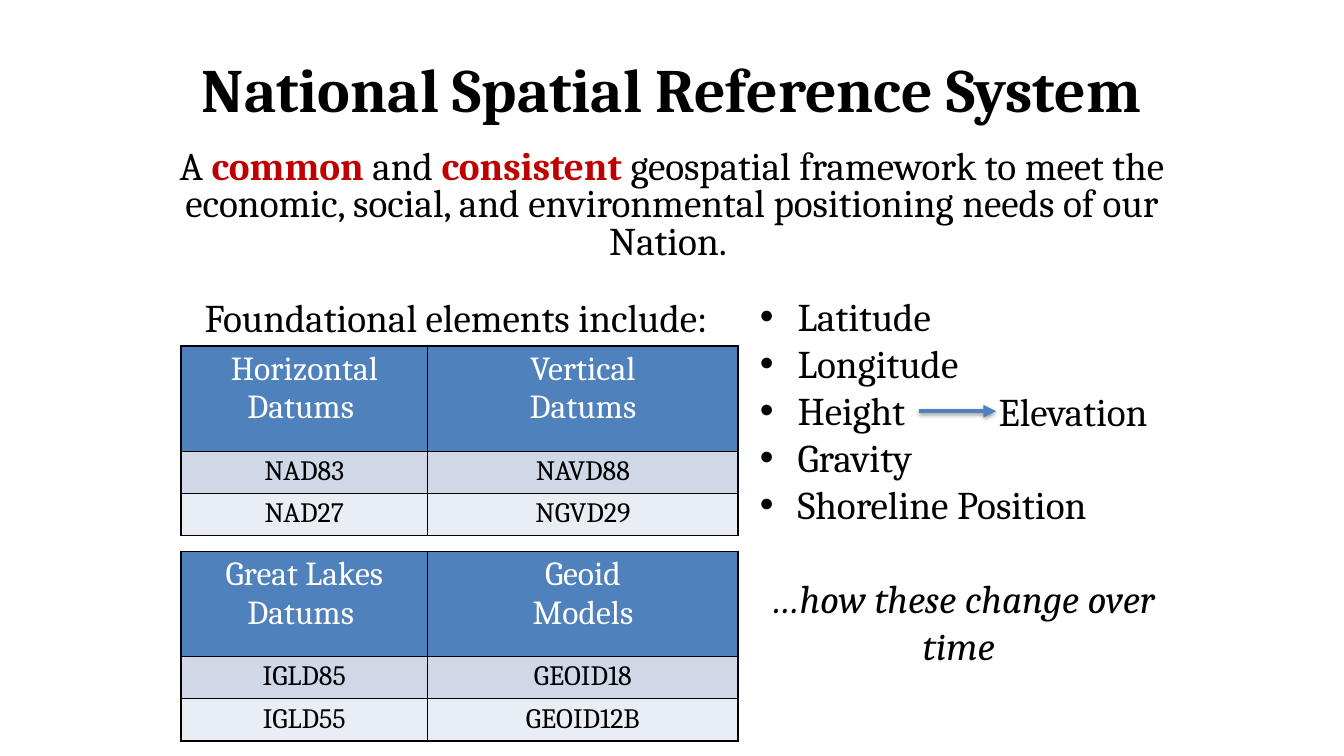
from lxml import etree
from pptx import Presentation
from pptx.dml.color import RGBColor
from pptx.enum import shapes, text
from pptx.oxml import ns, parse_xml
from pptx.util import Cm, Pt

BLACK = RGBColor(0x00, 0x00, 0x00)
WHITE = RGBColor(0xFF, 0xFF, 0xFF)
RED = RGBColor(0xC0, 0x00, 0x00)
BLUE = RGBColor(0x4F, 0x81, 0xBD)
BAND_DARK = RGBColor(0xD0, 0xD8, 0xE8)
BAND_LIGHT = RGBColor(0xE9, 0xED, 0xF4)

SHADOW = (
    f'<a:effectLst {ns.nsdecls("a")}>'
    f'<a:outerShdw blurRad="{Pt(3.1)}" dist="{Pt(1.6)}" dir="5400000" rotWithShape="0">'
    '<a:srgbClr val="000000"><a:alpha val="38000"/></a:srgbClr>'
    '</a:outerShdw></a:effectLst>'
)


def add_span(para, words, size=28, color=BLACK, bold=False, italic=False):
    span = para.add_run()
    span.text = words
    font = span.font
    font.name = "Cambria"
    font.size = Pt(size)
    font.color.rgb = color
    font.bold = bold
    font.italic = italic


def next_para(frame, align=text.PP_ALIGN.LEFT, before=0, spacing=1.0):
    """Return the unused first paragraph of a frame, or a new one after it."""
    para = frame.paragraphs[0]
    if para.runs:
        para = frame.add_paragraph()
    para.alignment = align
    para.space_before = Pt(before)
    para.line_spacing = spacing
    return para


def add_bullet(para, indent):
    props = para._p.get_or_add_pPr()
    props.set("marL", str(indent))
    props.set("indent", str(-indent))
    etree.SubElement(props, ns.qn("a:buFont")).set("typeface", "Arial")
    etree.SubElement(props, ns.qn("a:buChar")).set("char", "•")


def add_borders(cell):
    props = cell._tc.get_or_add_tcPr()
    for side in "LRTB":
        props.append(parse_xml(
            f'<a:ln{side} {ns.nsdecls("a")} w="{Pt(1)}"><a:solidFill>'
            f'<a:srgbClr val="{BLACK}"/></a:solidFill></a:ln{side}>'))


class Slide:
    center = text.PP_ALIGN.CENTER
    columns = (Cm(6.22), Cm(7.82))
    rows = (Cm(2.66), Cm(1.06), Cm(1.06))

    def __init__(self, deck):
        self.page = deck.slides.add_slide(deck.slide_layouts[5])

    def title(self, words, left, top, width, height):
        box = self.page.shapes.title
        box.left, box.top, box.width, box.height = left, top, width, height
        frame = box.text_frame
        frame.auto_size = text.MSO_AUTO_SIZE.NONE
        frame.vertical_anchor = text.MSO_ANCHOR.MIDDLE
        add_span(next_para(frame, self.center, spacing=0.9), words, size=44, bold=True)

    def box(self, left, top, width, height):
        frame = self.page.shapes.add_textbox(left, top, width, height).text_frame
        frame.word_wrap = True
        return frame

    def table(self, headings, body, left, top):
        grid = self.page.shapes.add_table(
            len(self.rows), len(self.columns), left, top,
            sum(self.columns), sum(self.rows)).table
        for column, width in zip(grid.columns, self.columns):
            column.width = width
        for row, height in zip(grid.rows, self.rows):
            row.height = height
        fills = (BLUE, BAND_DARK, BAND_LIGHT)
        for r, (values, fill) in enumerate(zip([headings, *body], fills)):
            size, color = (24, WHITE) if r == 0 else (20, BLACK)
            for c, value in enumerate(values):
                cell = grid.cell(r, c)
                cell.margin_left = cell.margin_right = Cm(0.2)
                cell.margin_top = cell.margin_bottom = Cm(0.1)
                add_borders(cell)
                cell.fill.solid()
                cell.fill.fore_color.rgb = fill
                for line in value.split("\n"):
                    para = next_para(cell.text_frame, self.center)
                    add_span(para, line, size=size, color=color)

    def arrow(self, start, end, y):
        line = self.page.shapes.add_connector(
            shapes.MSO_CONNECTOR.STRAIGHT, start, y, end, y)
        line.line.color.rgb = BLUE
        line.line.width = Pt(3)
        outline = line.line._get_or_add_ln()
        etree.SubElement(outline, ns.qn("a:tailEnd")).set("type", "triangle")
        line._element.spPr.append(parse_xml(SHADOW))


def main():
    deck = Presentation()
    deck.slide_width, deck.slide_height = Cm(33.87), Cm(19.05)
    slide = Slide(deck)
    slide.title("National Spatial Reference System", Cm(4.23), Cm(0.48), Cm(25.4), Cm(3.68))

    intro = slide.box(Cm(4.23), Cm(3.66), Cm(25.4), Cm(5.44))
    para = next_para(intro, slide.center, spacing=0.8)
    add_span(para, "A ")
    add_span(para, "common", color=RED, bold=True)
    add_span(para, " and ")
    add_span(para, "consistent ", color=RED, bold=True)
    add_span(para, "geospatial framework to meet the economic, social, and "
                   "environmental positioning needs of our Nation. ")
    para = next_para(intro, before=28, spacing=0.8)
    para._p.get_or_add_pPr().set("marL", str(Cm(0.68)))
    add_span(para, "Foundational elements include:")

    elements = slide.box(Cm(18.9), Cm(7.24), Cm(10.74), Cm(9.83))
    for name in ("Latitude", "Longitude", "Height", "Gravity", "Shoreline Position"):
        para = next_para(elements)
        add_bullet(para, Cm(0.95))
        add_span(para, name)
    para = next_para(elements, slide.center, before=33.5)
    add_span(para, "…how these change over time ", italic=True)

    tables = (
        (("Horizontal\nDatums ", "Vertical\nDatums"),
         (("NAD83", "NAVD88"), ("NAD27", "NGVD29"))),
        (("Great Lakes\nDatums ", "Geoid\nModels"),
         (("IGLD85", "GEOID18"), ("IGLD55", "GEOID12B"))),
    )
    for index, (headings, body) in enumerate(tables):
        slide.table(headings, body, Cm(4.56), Cm(8.72 + 5.17 * index))

    elevation = slide.box(Cm(24.92), Cm(9.63), Cm(5.77), Cm(1.45))
    add_span(next_para(elevation), "Elevation")
    slide.arrow(Cm(23.16), Cm(25.1), Cm(10.36))
    deck.save("out.pptx")


if __name__ == "__main__":
    main()
